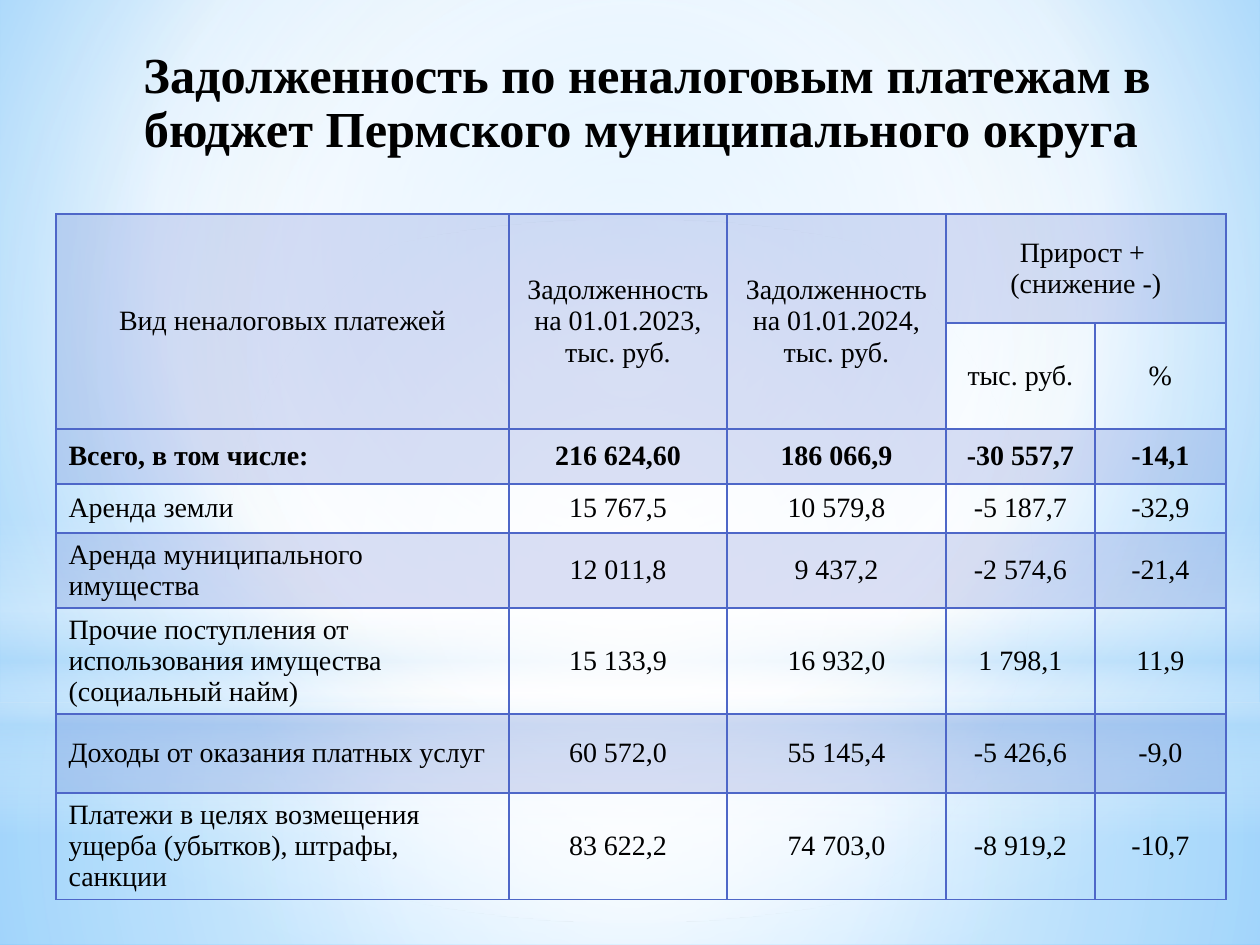
from lxml import etree
from pptx import Presentation
from pptx.dml.color import RGBColor
from pptx.enum.shapes import MSO_SHAPE
from pptx.enum.text import MSO_ANCHOR, MSO_AUTO_SIZE, PP_ALIGN
from pptx.oxml import parse_xml
from pptx.oxml.ns import nsdecls, qn
from pptx.util import Pt

RECT, OVAL = MSO_SHAPE.RECTANGLE, MSO_SHAPE.OVAL
MIDDLE, NO_AUTOFIT = MSO_ANCHOR.MIDDLE, MSO_AUTO_SIZE.NONE
CENTER, LEFT = PP_ALIGN.CENTER, PP_ALIGN.LEFT
TITLE_ONLY = 5

EMU_PER_PX = 914400 // 126
FONT = "Times New Roman"
BLACK, WHITE, SKY, INDIGO = "000000", "FFFFFF", "B4DCFA", "4E67C8"

TITLE = " Задолженность по неналоговым платежам в бюджет Пермского муниципального округа"
CENTERED = (50, 50, 50, 50)
COLUMN_WIDTHS = [453, 218, 219, 149, 131]
ROW_HEIGHTS = [109, 106, 55, 49, 75, 106, 79, 107]
TOTAL_ROW = 2
HEADER_SPANS = [((0, 0), (1, 0)), ((0, 1), (1, 1)), ((0, 2), (1, 2)), ((0, 3), (0, 4))]
DEBTS = [
    ["Вид неналоговых платежей", "Задолженность на 01.01.2023, тыс. руб.",
     "Задолженность на 01.01.2024, тыс. руб.", "Прирост + \n(снижение -)", ""],
    ["", "", "", "тыс. руб.", "%"],
    ["Всего, в том числе:", "216 624,60", "186 066,9", "-30 557,7", "-14,1"],
    ["Аренда земли", "15 767,5", "10 579,8", "-5 187,7", "-32,9"],
    ["Аренда муниципального имущества", "12 011,8", "9 437,2", "-2 574,6", "-21,4"],
    ["Прочие поступления от использования имущества (социальный найм)",
     "15 133,9", "16 932,0", "1 798,1", "11,9"],
    ["Доходы от оказания платных услуг", "60 572,0", "55 145,4", "-5 426,6", "-9,0"],
    ["Платежи в целях возмещения ущерба (убытков), штрафы, санкции",
     "83 622,2", "74 703,0", "-8 919,2", "-10,7"],
]


def px(length):
    return length * EMU_PER_PX


def rgb(color):
    return RGBColor.from_string(color)


def set_gradient(owner, stops, focus=None):
    """Turn the solid fill in owner into a gradient: circular around focus, else downward.

    Stops are (position %, colour, opacity %)."""
    stop_xml = "".join(
        f'<a:gs pos="{position * 1000}"><a:srgbClr val="{color}">'
        f'<a:alpha val="{opacity * 1000}"/></a:srgbClr></a:gs>'
        for position, color, opacity in stops)
    if focus:
        sides = " ".join(f'{side}="{value * 1000}"' for side, value in zip("ltrb", focus))
        direction = f'<a:path path="circle"><a:fillToRect {sides}/></a:path>'
    else:
        direction = '<a:lin ang="5400000" scaled="0"/>'
    gradient = parse_xml(f'<a:gradFill {nsdecls("a")} rotWithShape="1">'
                         f'<a:gsLst>{stop_xml}</a:gsLst>{direction}</a:gradFill>')
    solid = owner.find(".//" + qn("a:solidFill"))
    solid.getparent().replace(solid, gradient)


def add_glow(slide, preset, box, stops, focus=None):
    glow = slide.shapes.add_shape(preset, *map(px, box))
    glow.shadow.inherit = False
    glow.line.fill.background()
    glow.fill.solid()
    set_gradient(glow._element, stops, focus)


def add_backdrop(slide):
    slide.background.fill.solid()
    set_gradient(slide._element,
                 [(0, "9ED5FF", 100), (60, WHITE, 100), (100, "5BB9FF", 100)],
                 (20, 10, 20, 60))
    add_glow(slide, RECT, (0, 703, 1260, 242),
             [(0, WHITE, 91), (37, WHITE, 76), (100, SKY, 79)], CENTERED)
    add_glow(slide, RECT, (0, 0, 1260, 703),
             [(0, WHITE, 89), (48, WHITE, 62), (100, SKY, 79)], CENTERED)
    add_glow(slide, RECT, (0, 519, 1260, 315),
             [(0, WHITE, 0), (29, WHITE, 30), (45, SKY, 40),
              (55, WHITE, 26), (65, SKY, 60), (100, WHITE, 0)])
    add_glow(slide, OVAL, (0, 220, 1260, 703),
             [(0, WHITE, 100), (56, WHITE, 0)], CENTERED)


def format_paragraph(paragraph, size, align, bold):
    paragraph.alignment = align
    font = paragraph.font
    font.name, font.size, font.bold = FONT, Pt(size), bold
    font.color.rgb = rgb(BLACK)


def set_borders(cell):
    properties = cell._tc.get_or_add_tcPr()
    for side in ("lnL", "lnR", "lnT", "lnB"):
        properties.append(parse_xml(
            f'<a:{side} {nsdecls("a")} w="12700"><a:solidFill>'
            f'<a:srgbClr val="{INDIGO}"/></a:solidFill></a:{side}>'))


def set_band(cell, tinted):
    if not tinted:
        cell.fill.background()
        return
    cell.fill.solid()
    cell.fill.fore_color.rgb = rgb(INDIGO)
    color = cell._tc.tcPr.find(qn("a:solidFill")).find(qn("a:srgbClr"))
    etree.SubElement(color, qn("a:alpha"), val="20000")


def add_debt_table(slide):
    frame = slide.shapes.add_table(
        len(ROW_HEIGHTS), len(COLUMN_WIDTHS), px(56), px(214),
        px(sum(COLUMN_WIDTHS)), px(sum(ROW_HEIGHTS)))
    table = frame.table
    for column, width in zip(table.columns, COLUMN_WIDTHS):
        column.width = px(width)
    for row, height in zip(table.rows, ROW_HEIGHTS):
        row.height = px(height)
    for r, values in enumerate(DEBTS):
        for c, value in enumerate(values):
            cell = table.cell(r, c)
            cell.text = value
            cell.vertical_anchor = MIDDLE
            set_borders(cell)
            set_band(cell, r % 2 == 0)
            align = LEFT if c == 0 and r >= TOTAL_ROW else CENTER
            for paragraph in cell.text_frame.paragraphs:
                format_paragraph(paragraph, 16, align, r == TOTAL_ROW)
    for first, last in HEADER_SPANS:
        table.cell(*first).merge(table.cell(*last))


def place_title(slide):
    title = slide.shapes.title
    title.left, title.top, title.width, title.height = map(px, (74, 45, 1134, 118))
    frame = title.text_frame
    frame.text = TITLE
    frame.word_wrap = True
    frame.auto_size = NO_AUTOFIT
    frame.vertical_anchor = MIDDLE
    heading = frame.paragraphs[0]
    format_paragraph(heading, 28.8, CENTER, True)
    heading.line_spacing = 0.9
    slide.shapes._spTree.append(title._element)  # in front of the backdrop


def main():
    deck = Presentation()
    deck.slide_width, deck.slide_height = px(1260), px(945)
    slide = deck.slides.add_slide(deck.slide_layouts[TITLE_ONLY])
    add_backdrop(slide)
    add_debt_table(slide)
    place_title(slide)
    deck.save("out.pptx")


if __name__ == "__main__":
    main()
